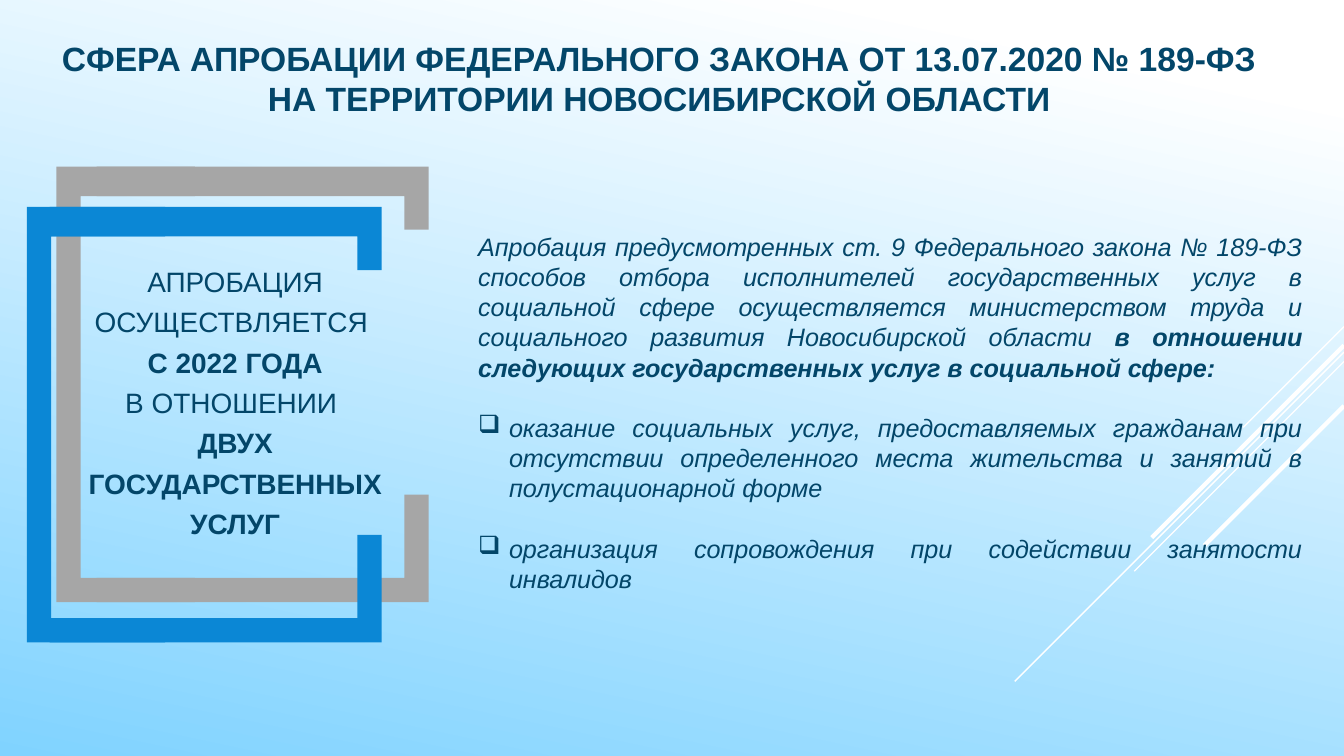
"""Build the slide on the scope of the trial of Federal Law 189-ФЗ."""
import pptx
import pptx.dml.color
import pptx.enum.shapes
import pptx.enum.text
import pptx.oxml
import pptx.oxml.ns
import pptx.util

Inches = pptx.util.Inches
Pt = pptx.util.Pt
ALIGN = pptx.enum.text.PP_ALIGN

THEME = {
    "font": "Arial", "text": "034669", "sky": "80D3FF", "white": "FFFFFF",
    "grey": "A6A6A6", "blue": "0B87D5", "title": 18, "body": 13.5, "label": 15,
}
TITLE = [
    [("СФЕРА АПРОБАЦИИ ФЕДЕРАЛЬНОГО ЗАКОНА ОТ 13.07.2020 № 189-ФЗ ", True)],
    [("НА ТЕРРИТОРИИ НОВОСИБИРСКОЙ ОБЛАСТИ ", True)],
]
LABEL = [
    [("АПРОБАЦИЯ ОСУЩЕСТВЛЯЕТСЯ ", False)],
    [("С 2022 ГОДА", True)],
    [("В ОТНОШЕНИИ ", False)],
    [("ДВУХ ГОСУДАРСТВЕННЫХ УСЛУГ", True)],
]
INTRO = [[
    ("Апробация предусмотренных ст. 9 Федерального закона № 189-ФЗ способов отбора "
     "исполнителей государственных услуг в социальной сфере осуществляется "
     "министерством труда и социального развития Новосибирской области ", False),
    ("в отношении следующих государственных услуг в социальной сфере:", True),
]]
SERVICES = [
    [("оказание социальных услуг, предоставляемых гражданам при отсутствии "
      "определенного места жительства и занятий в полустационарной форме", False)],
    [("организация сопровождения при содействии занятости инвалидов", False)],
]
RAYS = [(2.43, 0.75, 0.75), (2.62, 2.45, 0.75), (2.69, 1.56, 0.75),
        (2.57, 1.43, 2.25), (3.02, 1.04, 2.25)]
FRAMES = [("grey", 0.42, 1.24, 2.77), ("blue", 0.2, 1.54, 2.64)]
FRAME_HEIGHT, ARMS_WIDTH, SPINE_WIDTH = 3.24, 2.47, 1.03
BAR, TOP_BAR = 0.18, 0.22
TOP_HOOK, BOTTOM_HOOK = 0.47, 0.8
SLIDE_WIDTH = 10
SLIDE_HEIGHT = SLIDE_WIDTH * 9 / 16
BULLET_INDENT = 0.23


def rgb(name):
    return pptx.dml.color.RGBColor.from_string(THEME[name])


def apply(target, values):
    for name, value in values.items():
        setattr(target, name, value)


def place(shape, left, top, width, height):
    apply(shape, {"left": Inches(left), "top": Inches(top),
                  "width": Inches(width), "height": Inches(height)})
    apply(shape.text_frame, {"word_wrap": True,
                             "auto_size": pptx.enum.text.MSO_AUTO_SIZE.NONE,
                             "vertical_anchor": pptx.enum.text.MSO_ANCHOR.TOP})
    return shape.text_frame


def write(frame, paragraphs, size, layout, italic=False):
    written = []
    for spans in paragraphs:
        first = frame.paragraphs[0]
        para = frame.add_paragraph() if first.runs else first
        apply(para, layout)
        for text, bold in spans:
            span = para.add_run()
            span.text = text
            apply(span.font, {"name": THEME["font"], "size": Pt(THEME[size]),
                              "bold": bold, "italic": italic})
            span.font.color.rgb = rgb("text")
        written.append(para)
    return written


def add_bullet(para):
    properties = para._p.get_or_add_pPr()
    properties.set("marL", str(Inches(BULLET_INDENT)))
    properties.set("indent", str(-Inches(BULLET_INDENT)))
    bullet = pptx.oxml.parse_xml(
        f'<a:buChar {pptx.oxml.ns.nsdecls("a")} char="❑"/>')
    properties.append(bullet)


def add_ray(page, top, reach, weight):
    ray = page.shapes.add_connector(
        pptx.enum.shapes.MSO_CONNECTOR.STRAIGHT, Inches(SLIDE_WIDTH), Inches(top),
        Inches(SLIDE_WIDTH - reach), Inches(top + reach))
    ray.line.color.rgb = rgb("white")
    ray.line.width = Pt(weight)
    ray._element.spPr.append(
        pptx.oxml.parse_xml(f'<a:effectLst {pptx.oxml.ns.nsdecls("a")}/>'))


def add_outline(page, contours, color):
    builder = None
    for contour in contours:
        points = [(Inches(x), Inches(y)) for x, y in contour]
        if builder is None:
            builder = page.shapes.build_freeform(*points[0])
        else:
            builder.move_to(*points[0])
        builder.add_line_segments(points[1:], close=True)
    shape = builder.convert_to_shape()
    shape.shadow.inherit = False
    shape.fill.solid()
    shape.fill.fore_color.rgb = rgb(color)
    shape.line.fill.background()


def add_frame(page, color, left, top, width):
    right, bottom = left + width, top + FRAME_HEIGHT
    inner_top, inner_bottom = top + TOP_BAR, bottom - BAR
    spine_right, arms_left = left + SPINE_WIDTH, right - ARMS_WIDTH
    spine = [(left, top), (spine_right, top), (spine_right, inner_top),
             (left + BAR, inner_top), (left + BAR, inner_bottom),
             (spine_right, inner_bottom), (spine_right, bottom), (left, bottom)]
    arms = [
        [(arms_left, outer), (right, outer), (right, hook), (right - BAR, hook),
         (right - BAR, inner), (arms_left, inner)]
        for outer, inner, hook in ((top, inner_top, top + TOP_HOOK),
                                   (bottom, inner_bottom, bottom - BOTTOM_HOOK))
    ]
    add_outline(page, [spine], color)
    add_outline(page, arms, color)


def main():
    deck = pptx.Presentation()
    apply(deck, {"slide_width": Inches(SLIDE_WIDTH),
                 "slide_height": Inches(SLIDE_HEIGHT)})
    page = deck.slides.add_slide(deck.slide_layouts[5])
    fill = page.background.fill
    fill.gradient()
    fill.gradient_angle = 258
    for stop, position, color in zip(fill.gradient_stops, (0.1, 1), ("white", "sky")):
        stop.position = position
        stop.color.rgb = rgb(color)

    for ray in RAYS:
        add_ray(page, *ray)
    for frame in FRAMES:
        add_frame(page, *frame)

    title = place(page.shapes.title, 0, 0.23, 9.88, 1.01)
    write(title, TITLE, "title", {"alignment": ALIGN.CENTER})
    label = place(page.shapes.add_textbox(0, 0, 0, 0), 0.55, 1.87, 2.4, 2.22)
    write(label, LABEL, "label", {"alignment": ALIGN.CENTER, "line_spacing": 1.2})
    body = place(page.shapes.add_textbox(0, 0, 0, 0), 3.46, 1.67, 6.33, 2.83)
    write(body, INTRO, "body", {"alignment": ALIGN.JUSTIFY}, italic=True)
    services = write(body, SERVICES, "body",
                     {"alignment": ALIGN.JUSTIFY, "space_before": Pt(16.2)}, italic=True)
    for para in services:
        add_bullet(para)
    deck.save("out.pptx")


if __name__ == "__main__":
    main()
